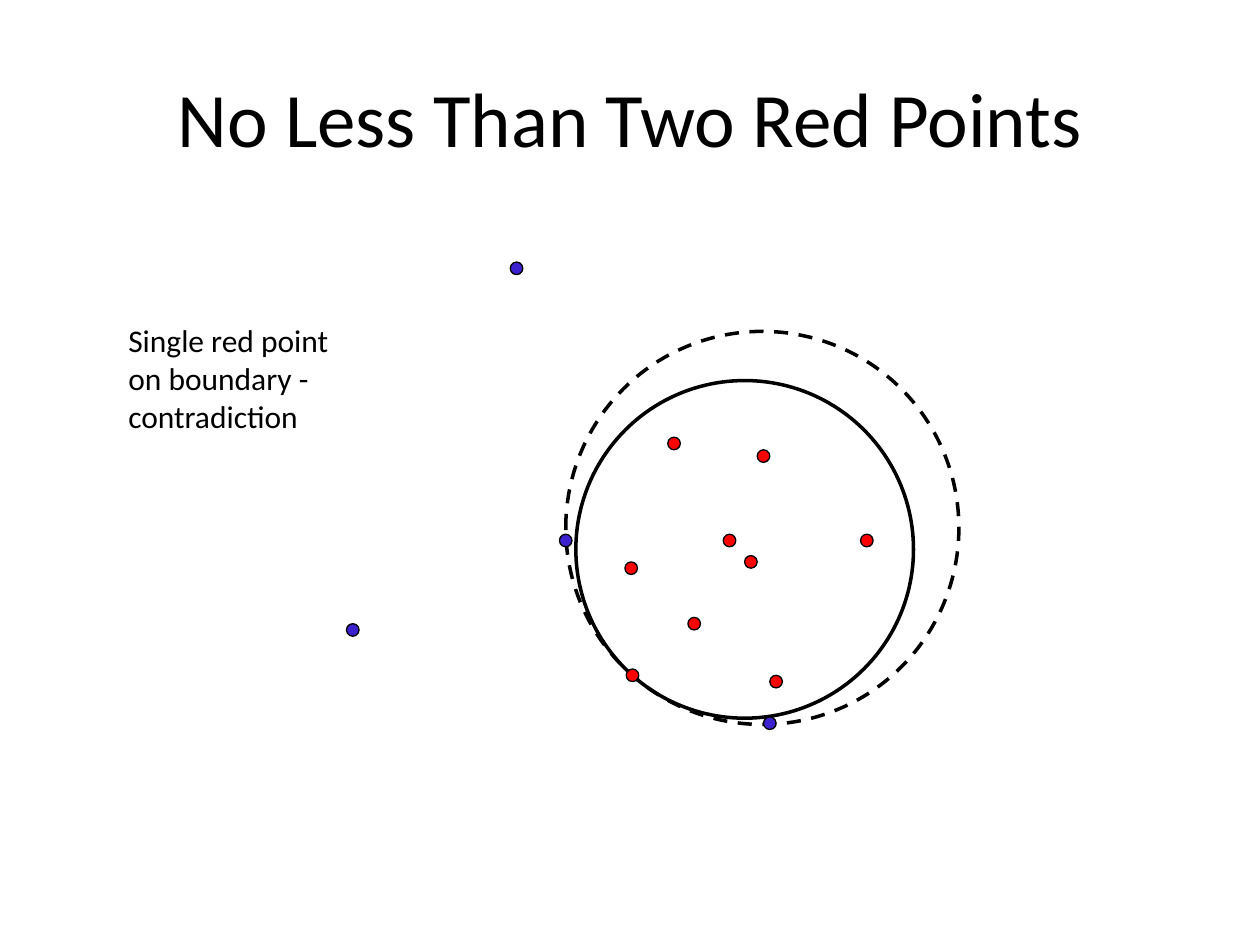
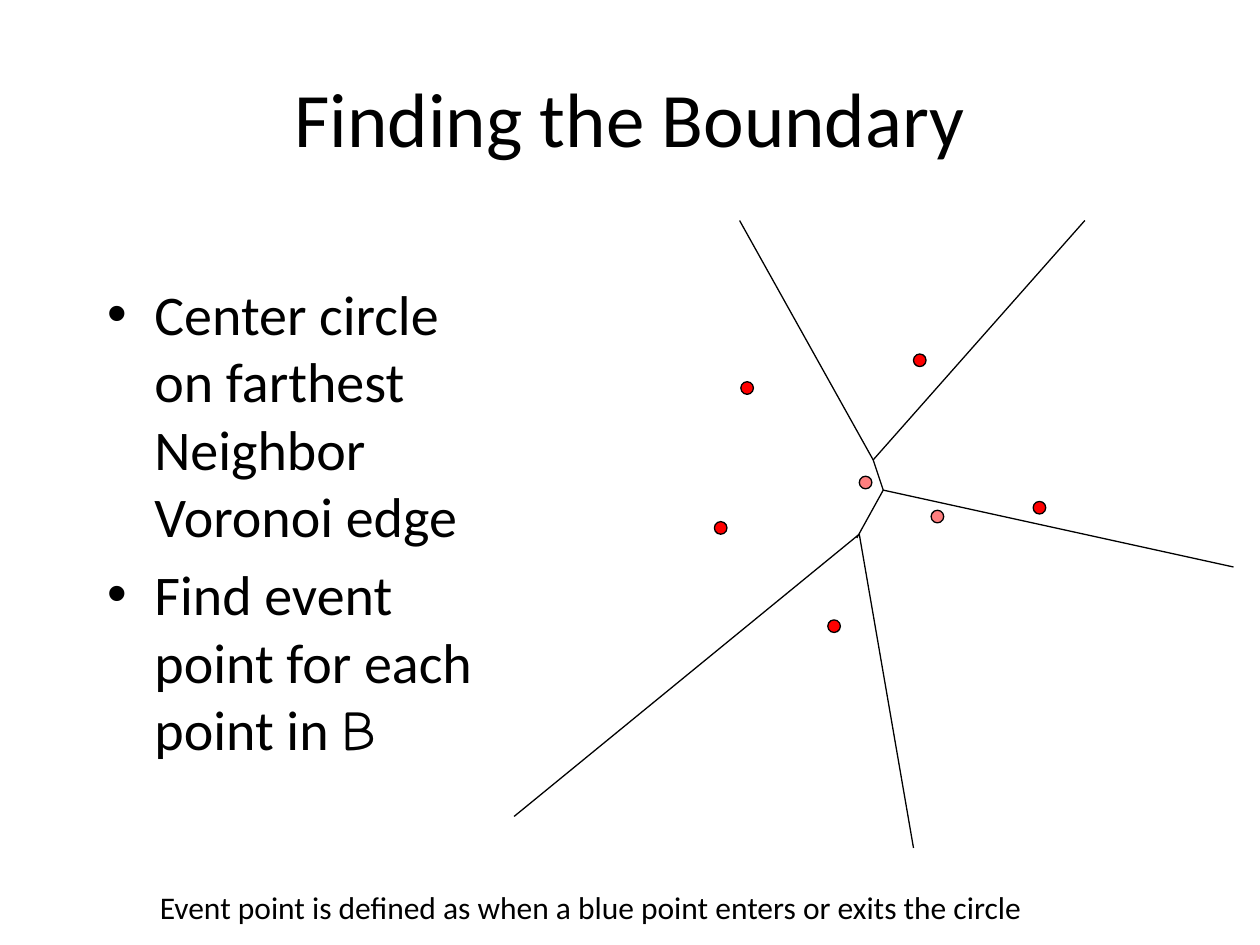
from lxml import etree
from pptx import Presentation
from pptx import util as u
from pptx.dml.color import RGBColor
from pptx.enum import dml, shapes, text
from pptx.oxml.ns import qn

FONT = "Calibri"
rgb = RGBColor.from_string
BLACK, RED, BLUE = "000000", "FF0000", "3B22CE"
DOT = 0.1
THIN, THICK = 0.75, 2


def add_circle(s, x, y, size=DOT, fill=None, width=THIN):
    sp = s.shapes.add_shape(shapes.MSO_SHAPE.OVAL, *map(u.Inches, (x, y, size, size)))
    sp.shadow.inherit = False
    if fill:
        sp.fill.solid()
        sp.fill.fore_color.rgb = rgb(fill)
    else:
        sp.fill.background()
    sp.line.color.rgb = rgb(BLACK)
    sp.line.width = u.Pt(width)
    return sp


def style(tf, size, align=text.PP_ALIGN.LEFT):
    tf.auto_size = text.MSO_AUTO_SIZE.NONE
    for p in tf.paragraphs:
        p.alignment = align
        p.font.name, p.font.size = FONT, u.Pt(size)
        p.font.color.rgb = rgb(BLACK)


prs = Presentation()
prs.slide_width, prs.slide_height = u.Inches(10), u.Inches(7.5)
title_and_content, title_only = prs.slide_layouts[1], prs.slide_layouts[5]

slides = []
for title, layout in (("No Less Than Two Red Points", title_only),
                      ("Finding the Boundary", title_and_content)):
    s = prs.slides.add_slide(layout)
    sp = s.shapes.title
    sp.left, sp.top, sp.width, sp.height = map(u.Inches, (0.5, 0.3, 9, 1.25))
    sp.text_frame.text = title
    sp.text_frame.vertical_anchor = text.MSO_ANCHOR.MIDDLE
    style(sp.text_frame, 44, text.PP_ALIGN.CENTER)
    slides.append(s)
two_points, boundary = slides

# Slide 1: enclosing circle and the larger circle through the single red point
add_circle(two_points, 4.57, 3.02, 2.68, width=THICK)
larger = add_circle(two_points, 4.49, 2.63, 3.12, width=THICK)
larger.line.dash_style = dml.MSO_LINE.DASH

points = {
    RED: [(4.97, 5.31), (6.01, 3.57), (5.46, 4.9), (5.3, 3.47), (4.96, 4.46),
          (6.83, 4.24), (6.11, 5.36), (5.74, 4.24), (5.91, 4.41)],
    BLUE: [(2.75, 4.95), (4.05, 2.08), (4.44, 4.24), (6.06, 5.69)],
}
for colour, places in points.items():
    for x, y in places:
        add_circle(two_points, x, y, fill=colour)

# Slide 2: farthest-neighbour Voronoi diagram
body = boundary.placeholders[1]
body.left, body.top, body.width, body.height = map(u.Inches, (0.75, 2.17, 3.33, 4.5))
tf = body.text_frame
tf.text = "Center circle on farthest Neighbor Voronoi edge"
p = tf.add_paragraph()
p.add_run().text = "Find event point for each point in "
r = p.add_run()
r.text = "B"
r.font.name = "Comic Neue"
style(tf, 32)

for x, y in [(5.88, 3.03), (7.25, 2.81), (5.67, 4.14), (6.57, 4.92), (8.2, 3.98)]:
    add_circle(boundary, x, y, fill=RED)
for x, y in [(6.82, 3.78), (7.39, 4.05)]:
    sp = add_circle(boundary, x, y, fill=RED)
    colour = sp._element.spPr.find(qn("a:solidFill"))[0]
    etree.SubElement(colour, qn("a:alpha"), val="50000")

upper, middle, lower = (6.93, 3.65), (7.01, 3.89), (6.82, 4.24)
edges = [
    (upper, (5.87, 1.75)), (upper, (8.61, 1.75)),
    (lower, (4.08, 6.48)), (lower, (7.25, 6.73)),
    (middle, (6.8, 4.27)), (middle, (9.79, 4.5)), (middle, upper),
]
for start, end in edges:
    edge = boundary.shapes.add_connector(
        shapes.MSO_CONNECTOR.STRAIGHT, *map(u.Inches, start + end))
    edge.line.color.rgb = rgb(BLACK)
    edge.line.width = u.Pt(THIN)
    etree.SubElement(edge._element.spPr, qn("a:effectLst"))

# Captions of both slides
for s, box, wrap, words in (
    (two_points, (0.92, 2.5, 1.83, 1.01), True,
     "Single red point on boundary - contradiction"),
    (boundary, (1.17, 7, 7.13, 0.4), False,
     "Event point is defined as when a blue point enters or exits the circle"),
):
    tf = s.shapes.add_textbox(*map(u.Inches, box)).text_frame
    tf.word_wrap = wrap
    tf.text = words
    style(tf, 18)

prs.save("out.pptx")
